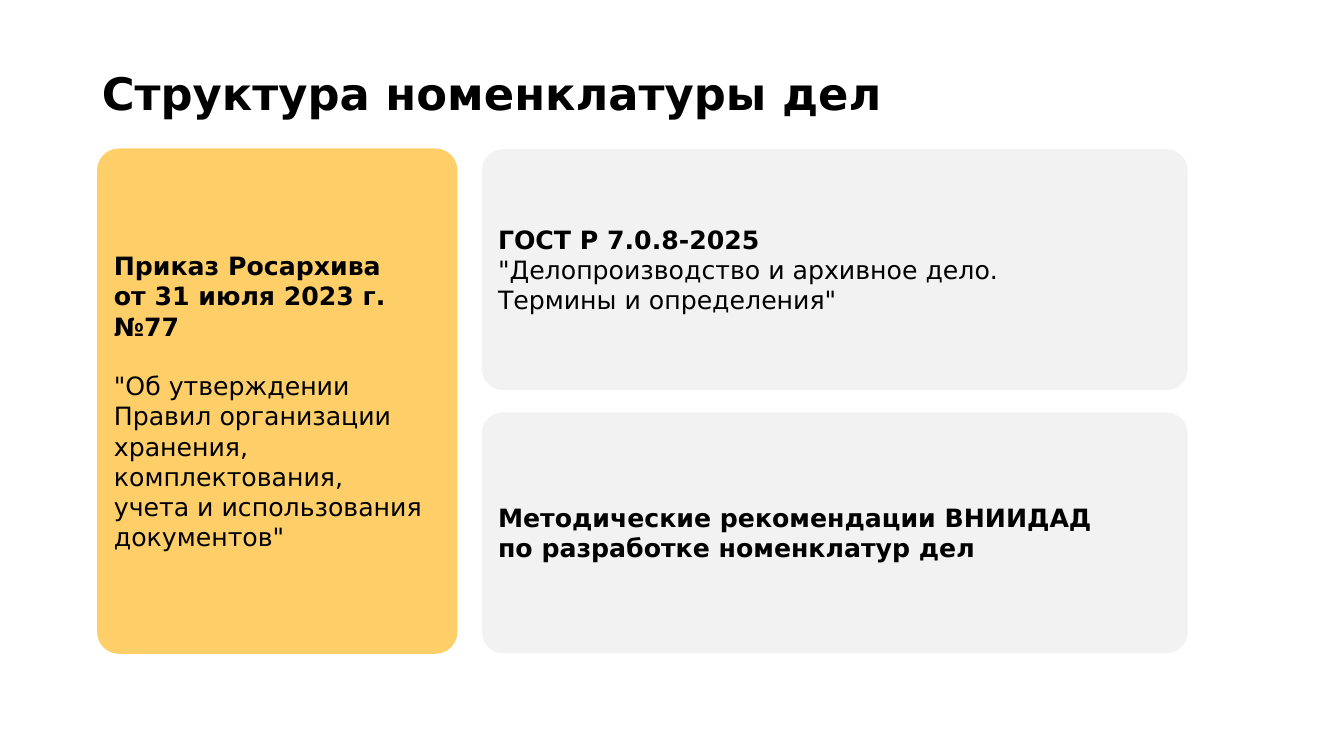
from dataclasses import dataclass

from pptx import Presentation
from pptx import util as u
from pptx.dml import color
from pptx.enum import shapes, text

FONT = "DejaVu Sans"
BLACK = "000000"
LEFT, TOP, TALL = 0.97, 1.48, 5
COLS = (3.56, 7)
ROWS = 2
COL_GAP, ROW_GAP = 0.25, 0.22
ROUND = 0.21


@dataclass
class Card:
    col: int
    row: int
    span: int
    fill: str
    head: str
    body: str = ""
    gap: float = 0
    edge: bool = False


CARDS = [
    Card(0, 0, 2, "FECF68",
         "Приказ Росархива\vот 31 июля 2023 г. №77",
         '"Об утверждении Правил организации хранения, комплектования,\v'
         'учета и использования документов"', gap=21, edge=True),
    Card(1, 0, 1, "F2F2F2", "ГОСТ Р 7.0.8-2025",
         '"Делопроизводство и архивное дело.\vТермины и определения"'),
    Card(1, 1, 1, "F2F2F2",
         "Методические рекомендации ВНИИДАД\vпо разработке номенклатур дел"),
]


def tint(code: str) -> color.RGBColor:
    return color.RGBColor.from_string(code)


def style(para, size: float, bold: bool) -> None:
    para.alignment = text.PP_ALIGN.LEFT
    for run in para.runs:
        run.font.name = FONT
        run.font.size = u.Pt(size)
        run.font.bold = bold
        run.font.color.rgb = tint(BLACK)


def place(shape, left: float, top: float, width: float, height: float) -> None:
    shape.left, shape.top = u.Inches(left), u.Inches(top)
    shape.width, shape.height = u.Inches(width), u.Inches(height)


def add_title(slide, words: str) -> None:
    title = slide.shapes.title
    place(title, LEFT, 0.69, 11.37, 0.54)
    frame = title.text_frame
    frame.text = words
    frame.word_wrap = True
    frame.auto_size = text.MSO_AUTO_SIZE.NONE
    frame.vertical_anchor = text.MSO_ANCHOR.BOTTOM
    frame.margin_left = frame.margin_right = u.Inches(0.04)
    frame.margin_top = frame.margin_bottom = u.Inches(0.04)
    para = frame.paragraphs[0]
    para.line_spacing = 0.9
    style(para, 32, True)


def add_card(slide, card: Card) -> None:
    unit = (TALL - ROW_GAP * (ROWS - 1)) / ROWS
    width = COLS[card.col]
    height = unit * card.span + ROW_GAP * (card.span - 1)
    left = LEFT + sum(COLS[:card.col]) + COL_GAP * card.col
    top = TOP + (unit + ROW_GAP) * card.row
    box = slide.shapes.add_shape(shapes.MSO_SHAPE.ROUNDED_RECTANGLE, 0, 0, 0, 0)
    place(box, left, top, width, height)
    box.adjustments[0] = ROUND / min(width, height)
    box.shadow.inherit = False
    box.fill.solid()
    box.fill.fore_color.rgb = tint(card.fill)
    if card.edge:
        box.line.color.rgb = tint(card.fill)
        box.line.width = u.Pt(1)
    else:
        box.line.fill.background()
    frame = box.text_frame
    frame.word_wrap = True
    frame.vertical_anchor = text.MSO_ANCHOR.MIDDLE
    head = frame.paragraphs[0]
    head.text = card.head
    style(head, 18, True)
    if card.body:
        body = frame.add_paragraph()
        body.text = card.body
        body.space_before = u.Pt(card.gap)
        style(body, 18, False)


def main() -> None:
    deck = Presentation()
    deck.slide_width, deck.slide_height = u.Inches(13.33), u.Inches(7.5)
    slide = deck.slides.add_slide(deck.slide_layouts[5])
    for card in CARDS:
        add_card(slide, card)
    add_title(slide, "Структура номенклатуры дел")
    deck.save("out.pptx")


if __name__ == "__main__":
    main()
